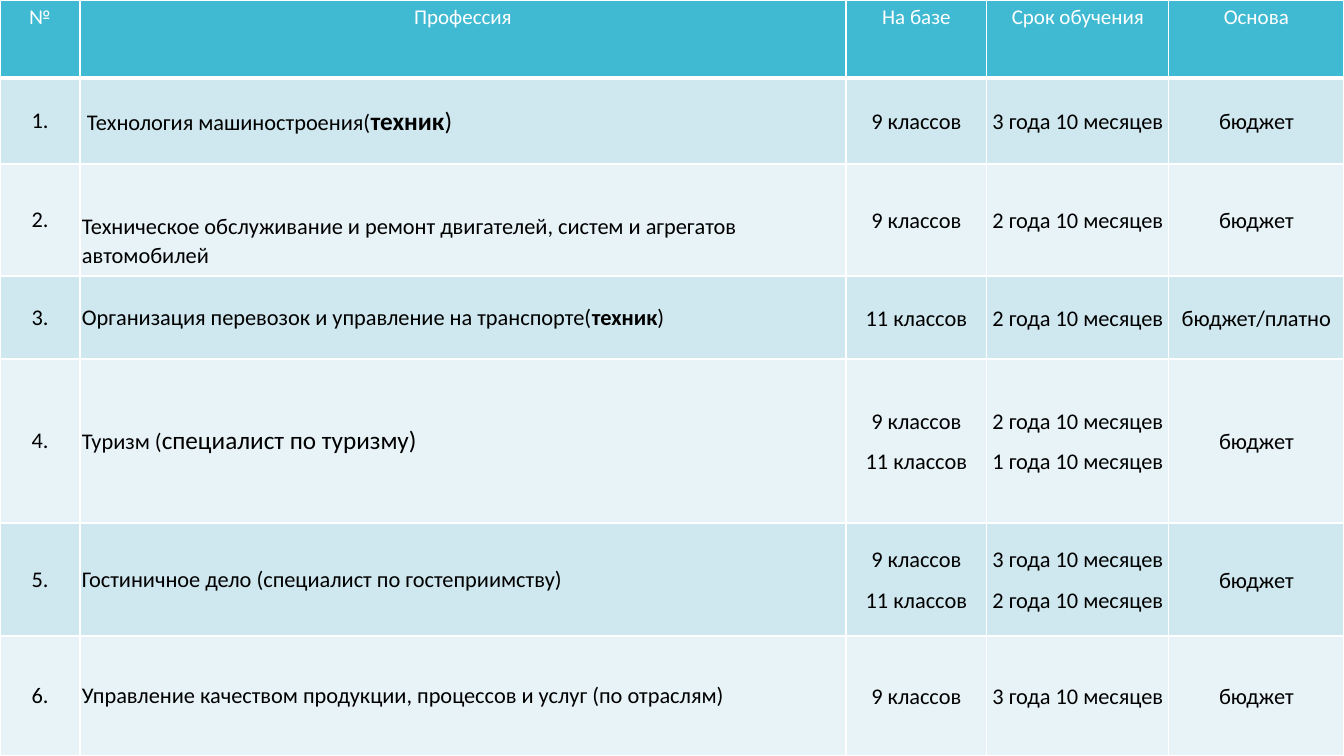
from dataclasses import dataclass

from lxml import etree
from pptx import Presentation
from pptx.dml.color import RGBColor
from pptx.enum.text import MSO_ANCHOR, PP_ALIGN
from pptx.oxml.ns import qn
from pptx.util import Emu, Pt

LEFT, CENTER = PP_ALIGN.LEFT, PP_ALIGN.CENTER
TOP, MIDDLE = MSO_ANCHOR.TOP, MSO_ANCHOR.MIDDLE
EMU_PER_PX = 914400 / 100.8


def px(length):
    return Emu(round(length * EMU_PER_PX))


@dataclass(frozen=True)
class Theme:
    font: str = "Calibri"
    header_fill: str = "40BAD2"
    bands: tuple = ("CFE7EE", "E8F3F7")
    border: str = "FFFFFF"
    header_text: str = "FFFFFF"
    body_text: str = "000000"
    header_size: int = 15
    body_size: int = 16
    large_size: int = 18
    thin: int = 1
    thick: int = 3
    line_spacing: float = 1.07
    space_after: int = 8


@dataclass(frozen=True)
class Span:
    text: str
    bold: bool = False
    large: bool = False


# Margins are left, top, right, bottom
WIDE_MARGINS = (10, 5, 10, 5)
TITLE_MARGINS = (2, 2, 2, 2)
LOWERED_MARGINS = (2, 43, 2, 2)
NO_MARGINS = (0, 0, 0, 0)

# Table content: title spans, title margins, loose title, bases, terms, funding
COLUMNS = (80, 766, 141, 182, 175)
ROWS = (78, 86, 112, 83, 164, 113, 120)
HEADINGS = ("№", "Профессия", "На базе", "Срок обучения", "Основа")
NINE, ELEVEN = "9 классов", "11 классов"
TERM_1, TERM_2, TERM_3 = (f"{years} года 10 месяцев" for years in (1, 2, 3))
BUDGET = "бюджет"
PROFESSIONS = (
    ([Span(" Технология машиностроения("), Span("техник", bold=True, large=True),
      Span(")", large=True)],
     TITLE_MARGINS, True, [NINE], [TERM_3], BUDGET),
    ([Span("Техническое обслуживание и ремонт двигателей, "
           "систем и агрегатов автомобилей")],
     LOWERED_MARGINS, True, [NINE], [TERM_2], BUDGET),
    ([Span("Организация перевозок и управление на транспорте("),
      Span("техник", bold=True), Span(")")],
     TITLE_MARGINS, False, [ELEVEN], [TERM_2], "бюджет/платно"),
    ([Span("Туризм ("), Span("специалист по туризму)", large=True)],
     TITLE_MARGINS, False, [NINE, ELEVEN], [TERM_2, TERM_1], BUDGET),
    ([Span("Гостиничное дело (специалист по гостеприимству)")],
     TITLE_MARGINS, False, [NINE, ELEVEN], [TERM_3, TERM_2], BUDGET),
    ([Span("Управление качеством продукции, процессов и услуг (по отраслям)")],
     TITLE_MARGINS, False, [NINE], [TERM_3], BUDGET),
)


class PageBuilder:
    def __init__(self, page, theme):
        self.page = page
        self.theme = theme

    def table(self, columns, rows):
        frame = self.page.shapes.add_table(
            len(rows), len(columns), px(0), px(0), px(sum(columns)), px(sum(rows)))
        table = frame.table
        table.first_row = table.horz_banding = False
        for column, width in zip(table.columns, columns):
            column.width = px(width)
        for row, height in zip(table.rows, rows):
            row.height = px(height)
        return table

    def borders(self, cell, widths):
        properties = cell._tc.get_or_add_tcPr()
        for side, width in widths.items():
            line = etree.SubElement(properties, qn(f"a:ln{side}"), w=str(Pt(width)))
            fill = etree.SubElement(line, qn("a:solidFill"))
            etree.SubElement(fill, qn("a:srgbClr"), val=self.theme.border)

    def cell(self, cell, fill, margins, anchor):
        cell.fill.solid()
        cell.fill.fore_color.rgb = RGBColor.from_string(fill)
        cell.margin_left, cell.margin_top, cell.margin_right, cell.margin_bottom = map(
            px, margins)
        cell.vertical_anchor = anchor

    def text(self, cell, paras, size, color, align=CENTER, loose=False):
        frame = cell.text_frame
        for index, spans in enumerate(paras):
            para = frame.add_paragraph() if index else frame.paragraphs[0]
            para.alignment = align
            para.font.name = self.theme.font
            para.font.size = Pt(size)
            para.font.color.rgb = RGBColor.from_string(color)
            if loose:
                para.line_spacing = self.theme.line_spacing
                para.space_after = Pt(self.theme.space_after)
            for span in spans:
                run = para.add_run()
                run.text = span.text
                run.font.name = self.theme.font
                run.font.size = Pt(self.theme.large_size if span.large else size)
                run.font.bold = span.bold
                run.font.color.rgb = RGBColor.from_string(color)

    def header_cell(self, cell, heading):
        theme = self.theme
        self.borders(cell, {"L": theme.thin, "R": theme.thin,
                            "T": theme.thin, "B": theme.thick})
        self.cell(cell, theme.header_fill, WIDE_MARGINS, TOP)
        self.text(cell, [[Span(heading)]], theme.header_size, theme.header_text)

    def body_cell(self, cell, paras, fill, margins, align=CENTER, loose=True):
        theme = self.theme
        self.borders(cell, dict.fromkeys("LRB", theme.thin))
        self.cell(cell, fill, margins, MIDDLE)
        self.text(cell, paras, theme.body_size, theme.body_text, align, loose)


def main():
    deck = Presentation()
    deck.slide_width, deck.slide_height = px(sum(COLUMNS)), px(sum(ROWS))
    theme = Theme()
    builder = PageBuilder(deck.slides.add_slide(deck.slide_layouts[6]), theme)
    table = builder.table(COLUMNS, ROWS)

    # Header row
    for column, heading in enumerate(HEADINGS):
        builder.header_cell(table.cell(0, column), heading)

    # Professions
    for row, profession in enumerate(PROFESSIONS, start=1):
        title, margins, loose, bases, terms, funding = profession
        fill = theme.bands[(row - 1) % len(theme.bands)]
        builder.body_cell(table.cell(row, 0), [[Span(f"{row}.")]], fill,
                          WIDE_MARGINS, loose=False)
        builder.body_cell(table.cell(row, 1), [title], fill, margins, LEFT, loose)
        for column, lines in enumerate((bases, terms, [funding]), start=2):
            builder.body_cell(table.cell(row, column),
                              [[Span(line)] for line in lines], fill, NO_MARGINS)

    deck.save("out.pptx")


if __name__ == "__main__":
    main()
